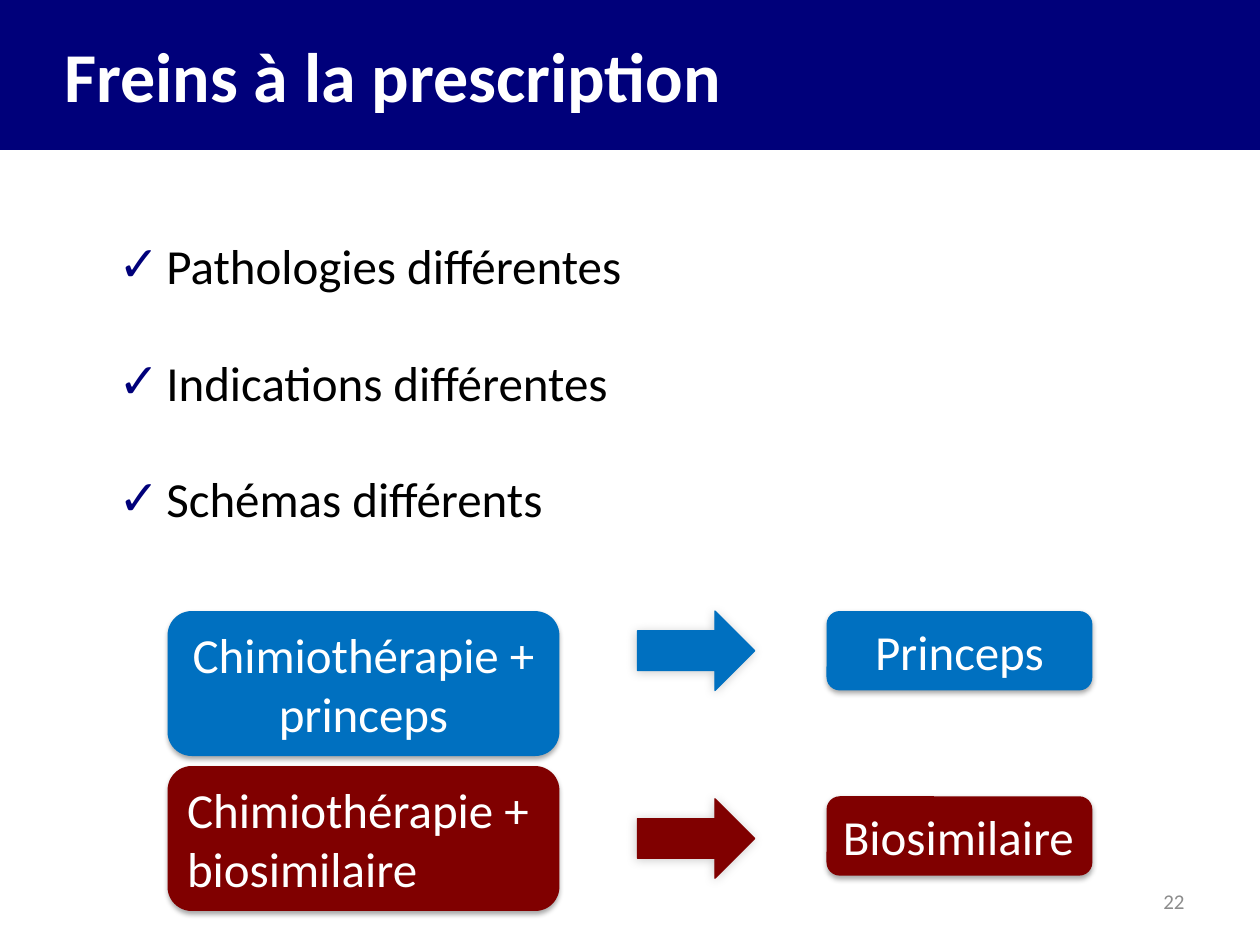
from lxml.etree import SubElement
from pptx import Presentation
from pptx.dml.color import RGBColor
from pptx.enum.shapes import MSO_SHAPE
from pptx.enum.text import MSO_ANCHOR, MSO_AUTO_SIZE, PP_ALIGN
from pptx.oxml.ns import qn
from pptx.util import Inches, Pt

# Content
TITLE = "Freins à la prescription"
REASONS = ["Pathologies différentes", "Indications différentes", "Schémas différents"]
PAGE_NUMBER = "22"
# colour, regimen, regimen top, product, product top, arrow top, alignment, product wraps
SCHEMES = [
    ("blue", "Chimiothérapie + princeps", 4.85, "Princeps", 4.85, 4.85, PP_ALIGN.CENTER, True),
    ("red", "Chimiothérapie + biosimilaire", 6.08, "Biosimilaire", 6.32, 6.34, PP_ALIGN.LEFT, False),
]

THEME = {
    "font": "Calibri",
    "navy": "00007A", "blue": "0070C0", "red": "800000",
    "white": "FFFFFF", "black": "000000", "grey": "8C8C8C",
    "title": 40, "body": 28, "number": 12,
}
# opacity in percent, blur and distance in points, direction in degrees
BOX_SHADOW = (35, 3.1, 1.8, 90)
ARROW_SHADOW = (20, 6, 1, 135)


def color(name):
    return RGBColor.from_string(THEME[name])


def place(shape, left, top, width, height):
    for name, value in {"left": left, "top": top, "width": width, "height": height}.items():
        setattr(shape, name, Inches(value))


def set_frame(shape, **values):
    for name, value in {"auto_size": MSO_AUTO_SIZE.NONE, "word_wrap": True, **values}.items():
        setattr(shape.text_frame, name, value)


def write(para, text, size, ink, align=PP_ALIGN.LEFT, bold=False):
    para.alignment = align
    span = para.add_run()
    span.text = text
    for name, value in {"name": THEME["font"], "size": Pt(THEME[size]), "bold": bold}.items():
        setattr(span.font, name, value)
    span.font.color.rgb = color(ink)


def indent(para, margin, first):
    properties = para._p.get_or_add_pPr()
    properties.set("marL", str(Inches(margin)))
    properties.set("indent", str(Inches(first)))
    return properties


def add_check(para):
    properties = indent(para, 0.38, -0.38)
    bullet_color = SubElement(properties, qn("a:buClr"))
    SubElement(bullet_color, qn("a:srgbClr"), val=THEME["navy"])
    SubElement(properties, qn("a:buChar"), char="✓")


def add_shadow(shape, opacity, blur, distance, direction):
    shape.shadow.inherit = False
    effects = shape._element.spPr.find(qn("a:effectLst"))
    shadow = SubElement(effects, qn("a:outerShdw"), blurRad=str(Pt(blur)), dist=str(Pt(distance)),
                        dir=str(direction * 60000), rotWithShape="0")
    ink = SubElement(shadow, qn("a:srgbClr"), val=THEME["black"])
    SubElement(ink, qn("a:alpha"), val=str(opacity * 1000))


def add_filled(page, kind, area, fill, shadow):
    shape = page.shapes.add_shape(kind, *map(Inches, area))
    shape.fill.solid()
    shape.fill.fore_color.rgb = color(fill)
    shape.line.fill.background()
    add_shadow(shape, *shadow)
    return shape


def add_box(page, area, fill, text, align, wrap=True):
    box = add_filled(page, MSO_SHAPE.ROUNDED_RECTANGLE, area, fill, BOX_SHADOW)
    set_frame(box, word_wrap=wrap, vertical_anchor=MSO_ANCHOR.TOP)
    write(box.text_frame.paragraphs[0], text, "body", "white", align)


def main():
    deck = Presentation()
    deck.slide_width, deck.slide_height = Inches(10), Inches(7.5)
    page = deck.slides.add_slide(deck.slide_layouts[1])

    # Title band
    title = page.shapes.title
    place(title, 0, 0, 10, 1.19)
    title.fill.solid()
    title.fill.fore_color.rgb = color("navy")
    set_frame(title, vertical_anchor=MSO_ANCHOR.MIDDLE,
              margin_left=Inches(0.11), margin_right=Inches(0.11))
    heading = title.text_frame.paragraphs[0]
    indent(heading, 0.4, 0)
    write(heading, TITLE, "title", "white", bold=True)

    # Checked list
    body = page.placeholders[1]
    place(body, 0.84, 1.82, 4.23, 2.46)
    set_frame(body, vertical_anchor=MSO_ANCHOR.TOP)
    for index, reason in enumerate(REASONS):
        para = body.text_frame.add_paragraph() if index else body.text_frame.paragraphs[0]
        add_check(para)
        para.space_before = Pt(33 if index else 0)
        write(para, reason, "body", "black")

    # Regimen, arrow and product of each scheme
    for fill, regimen, top, product, product_top, arrow_top, align, wrap in SCHEMES:
        add_box(page, (1.33, top, 3.11, 1.15), fill, regimen, align)
        add_box(page, (6.56, product_top, 2.11, 0.63), fill, product, align, wrap)
        arrow = add_filled(page, MSO_SHAPE.RIGHT_ARROW, (5.06, arrow_top, 0.93, 0.63),
                           fill, ARROW_SHADOW)
        arrow.line.color.rgb = color(fill)
        arrow.line.width = Pt(0.75)

    # Page number
    number = page.shapes.add_textbox(*map(Inches, (7.17, 6.95, 2.33, 0.4)))
    set_frame(number, vertical_anchor=MSO_ANCHOR.MIDDLE)
    write(number.text_frame.paragraphs[0], PAGE_NUMBER, "number", "grey", PP_ALIGN.RIGHT)

    deck.save("out.pptx")


if __name__ == "__main__":
    main()
